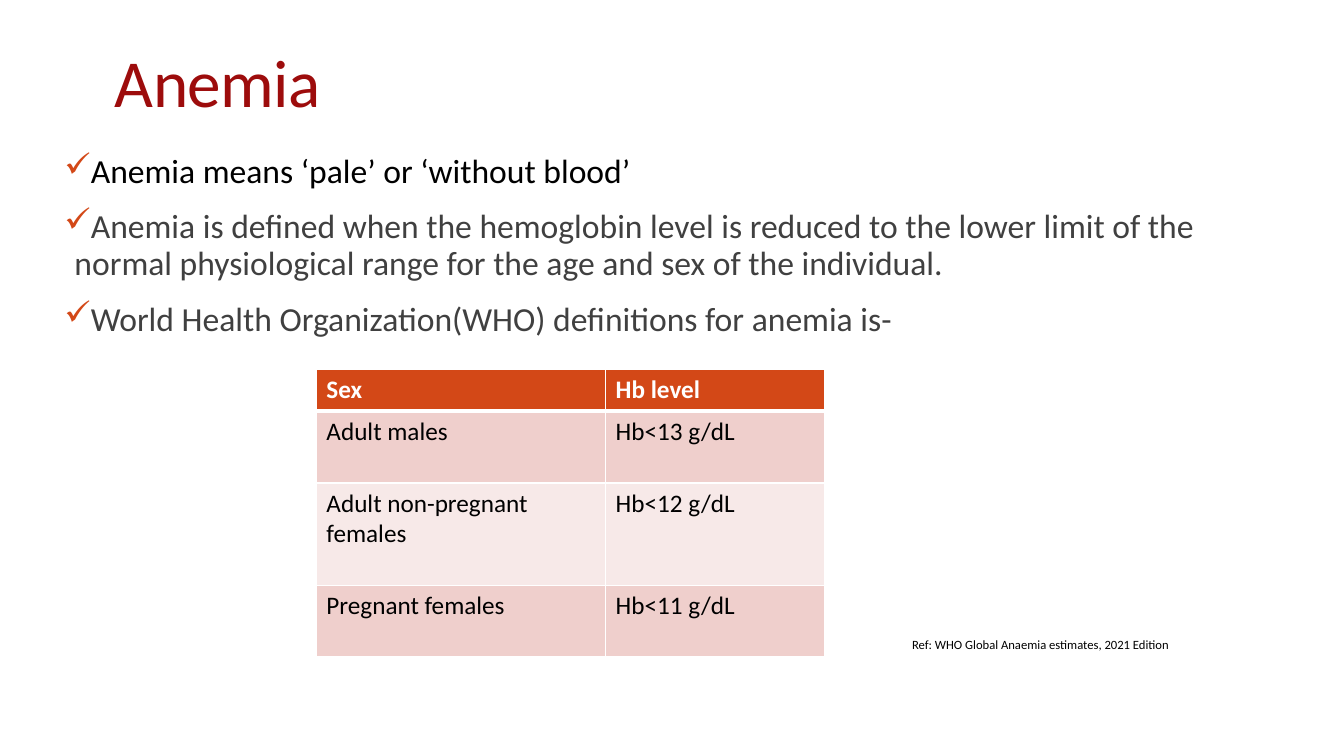
from lxml import etree
from pptx import Presentation
from pptx.dml.color import RGBColor
from pptx.enum.text import MSO_ANCHOR
from pptx.oxml.ns import qn
from pptx.util import Pt

TOP = MSO_ANCHOR.TOP
FONT = "Calibri"
DARK_RED = RGBColor(0x9D, 0x0C, 0x0C)
ORANGE = RGBColor(0xD3, 0x48, 0x17)
BLACK = RGBColor(0, 0, 0)
GREY = RGBColor(0x40, 0x40, 0x40)
WHITE = RGBColor(0xFF, 0xFF, 0xFF)
BANDS = [RGBColor(0xEF, 0xCF, 0xCC), RGBColor(0xF7, 0xE9, 0xE8)]

DEFINITIONS = [
    ("Anemia means ‘pale’ or ‘without blood’", BLACK),
    ("Anemia is defined when the hemoglobin level is reduced to the lower limit of the "
     "normal physiological range for the age and sex of the individual.", GREY),
    ("World Health Organization(WHO) definitions for anemia is-", GREY),
]
HB_LEVELS = [
    ("Sex", "Hb level"),
    ("Adult males", "Hb<13 g/dL"),
    ("Adult non-pregnant females", "Hb<12 g/dL"),
    ("Pregnant females", "Hb<11 g/dL"),
]
COL_WIDTHS = [206.6, 156.2]
ROW_HEIGHTS = [29.5, 51.4, 72.9, 51.4]


def add_text(p, text, size=18, color=BLACK, bold=False, line=None, spacing=None):
    """Write one formatted run into paragraph p."""
    if line:
        p.line_spacing = line
    r = p.add_run()
    r.text = text
    f = r.font
    f.name, f.size, f.bold = FONT, Pt(size), bold
    f.color.rgb = color
    if spacing is not None:
        r._r.get_or_add_rPr().set("spc", str(int(spacing * 100)))


def add_box(s, left, top, width, height, insets=(7.2, 3.6, 7.2, 3.6)):
    """Add a wrapping text box and return its text frame."""
    tf = s.shapes.add_textbox(Pt(left), Pt(top), Pt(width), Pt(height)).text_frame
    tf.word_wrap = True
    tf.vertical_anchor = TOP
    tf.margin_left, tf.margin_top, tf.margin_right, tf.margin_bottom = map(Pt, insets)
    return tf


def set_bullet(p, char, color, indent):
    pPr = p._p.get_or_add_pPr()
    pPr.set("marL", str(Pt(indent)))
    pPr.set("indent", str(-Pt(indent)))
    clr = etree.SubElement(pPr, qn("a:buClr"))
    etree.SubElement(clr, qn("a:srgbClr"), val=str(color))
    etree.SubElement(pPr, qn("a:buChar"), char=char)


def set_borders(cell, color, **widths):
    """Draw the sides lnL, lnR, lnT and lnB in the given widths."""
    tcPr = cell._tc.get_or_add_tcPr()
    for i, (side, width) in enumerate(widths.items()):
        ln = etree.Element(qn("a:" + side), w=str(Pt(width)))
        fill = etree.SubElement(ln, qn("a:solidFill"))
        etree.SubElement(fill, qn("a:srgbClr"), val=str(color))
        tcPr.insert(i, ln)


def add_title(s, left, top, width, height):
    tf = add_box(s, left, top, width, height, (7.2, 11.2, 7.2, 3.6))
    add_text(tf.paragraphs[0], "Anemia", size=48, color=DARK_RED, line=0.85, spacing=-0.5)


def add_definitions(s, left, top, width, height):
    tf = add_box(s, left, top, width, height, (0, 3.6, 0, 3.6))
    for i, (text, color) in enumerate(DEFINITIONS):
        p = tf.add_paragraph() if i else tf.paragraphs[0]
        set_bullet(p, "✓", ORANGE, 7.2)
        if i:
            p.space_before = Pt(12)
        p.space_after = Pt(2)
        add_text(p, text, size=24, color=color, line=0.9)


def add_hb_table(s, left, top):
    table = s.shapes.add_table(len(HB_LEVELS), len(COL_WIDTHS), Pt(left), Pt(top),
                               Pt(sum(COL_WIDTHS)), Pt(sum(ROW_HEIGHTS))).table
    for col, width in zip(table.columns, COL_WIDTHS):
        col.width = Pt(width)
    for i, (row, height) in enumerate(zip(table.rows, ROW_HEIGHTS)):
        row.height = Pt(height)
        header = i == 0
        for cell, text in zip(row.cells, HB_LEVELS[i]):
            cell.fill.solid()
            cell.fill.fore_color.rgb = ORANGE if header else BANDS[(i - 1) % 2]
            set_borders(cell, WHITE, lnL=1, lnR=1, lnT=3 if i == 1 else 1,
                        lnB=3 if header else 1)
            add_text(cell.text_frame.paragraphs[0], text,
                     color=WHITE if header else BLACK, bold=header)


def add_reference(s, left, top, width, height):
    tf = add_box(s, left, top, width, height)
    add_text(tf.paragraphs[0], "Ref: WHO Global Anaemia estimates, 2021 Edition", size=9)


def main():
    prs = Presentation()
    prs.slide_width, prs.slide_height = Pt(960), Pt(540)
    s = prs.slides.add_slide(prs.slide_layouts[6])
    add_title(s, 75, 26.6, 792, 114.5)
    add_definitions(s, 46, 106.5, 868, 157.5)
    add_hb_table(s, 226, 264.2)
    add_reference(s, 644.4, 451.4, 298, 18)
    prs.save("out.pptx")


if __name__ == "__main__":
    main()
